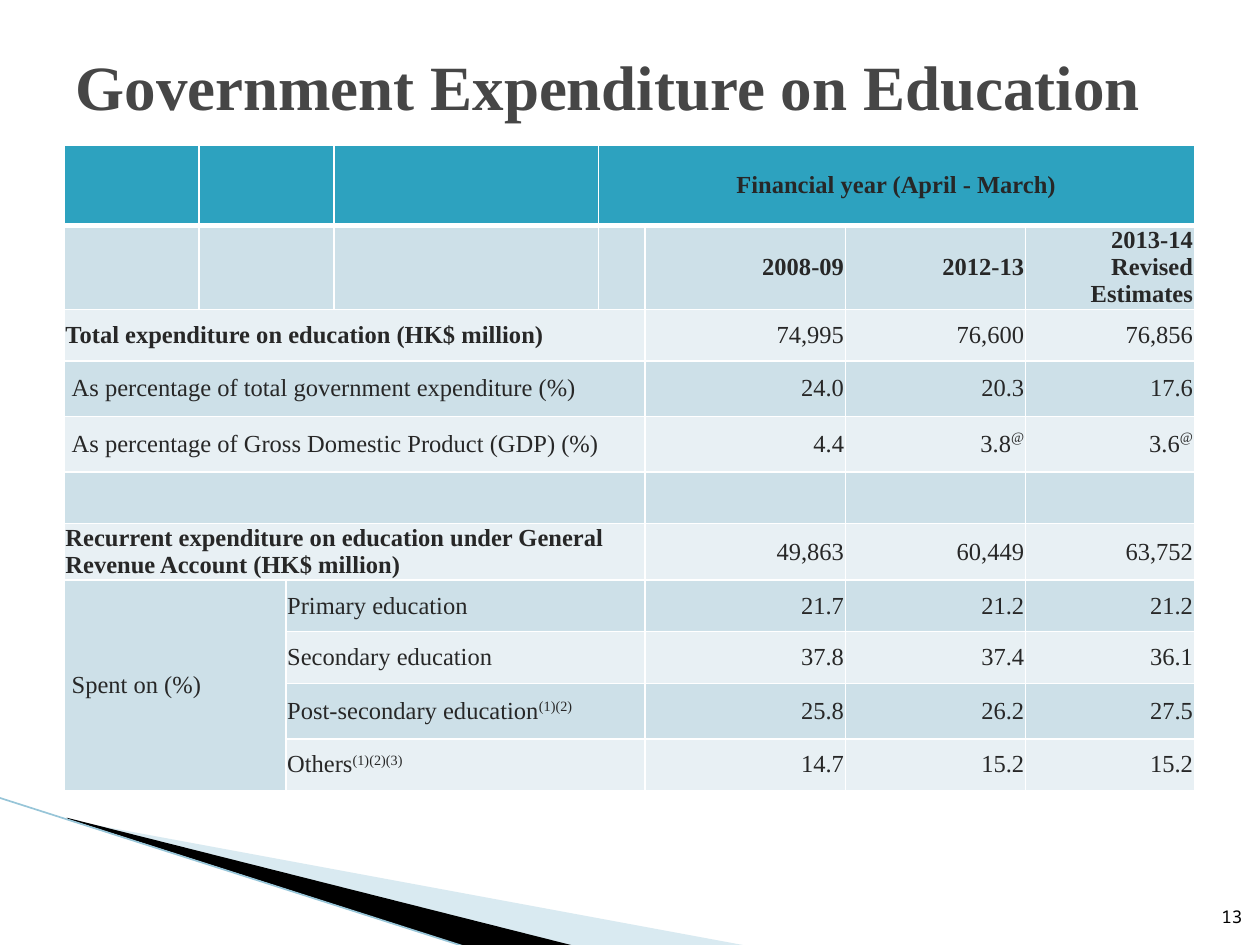
from lxml.etree import SubElement
from pptx import Presentation
from pptx.dml.color import RGBColor
from pptx.enum.shapes import MSO_CONNECTOR
from pptx.enum.text import MSO_ANCHOR as Anchor, MSO_AUTO_SIZE, PP_ALIGN as Align
from pptx.oxml.ns import qn
from pptx.util import Inches, Pt

THEME = dict(
    font="Times New Roman", number_font="Noto Sans Mono",
    title_size=36, body_size=14, number_size=10,
    title="464646", body="272727", black="000000", border="FFFFFF",
    header="2DA2BF", bands=("CDE0E8", "E8F0F4"), wedge="A0CBDC", edge="97C5D8",
)
TITLE = "Government Expenditure on Education"
PAGE_NUMBER = "13"

COLUMNS = [1.07, 0.69, 0.38, 2.1, 0.37, 1.59, 1.43, 1.34]
ROWS = [0.64, 0.65, 0.41, 0.44, 0.44, 0.41, 0.44, 0.41, 0.41, 0.44, 0.41]
FIRST_VALUE = 5
YEARS = ["2008-09", "2012-13", "2013-14\nRevised Estimates"]
# Text after "^" is raised. Each entry: label, values, bold label
TOTALS = [
    ("Total expenditure on education (HK$ million)", ["74,995", "76,600", "76,856"], True),
    ("\u00a0As percentage of total government expenditure (%)", ["24.0", "20.3", "17.6"], False),
    ("\u00a0As percentage of Gross Domestic Product (GDP) (%)", ["4.4", "3.8^@", "3.6^@"], False),
    ("", ["", "", ""], False),
    ("Recurrent expenditure on education under General Revenue Account (HK$ million)",
     ["49,863", "60,449", "63,752"], True),
]
SPENT_ON = "\u00a0Spent on (%)\u00a0"
LEVELS = [
    ("Primary education", ["21.7", "21.2", "21.2"]),
    ("Secondary education", ["37.8", "37.4", "36.1"]),
    ("Post-secondary\u00a0education^(1)(2)", ["25.8", "26.2", "27.5"]),
    ("Others^(1)(2)(3)", ["14.7", "15.2", "15.2"]),
]
WEDGES = [
    ([(0.55, 6.51), (5.95, 7.51), (4.56, 7.51), (0.55, 6.5)], THEME["wedge"], 40),
    ([(0.53, 6.49), (4.57, 7.51), (3.72, 7.52), (0.54, 6.5)], THEME["black"], 100),
]


def color(value):
    return RGBColor.from_string(value)


def write(frame, text, size=THEME["body_size"], font=THEME["font"], ink=THEME["body"],
          bold=False, align=Align.LEFT, raise_by=40):
    for index, line in enumerate(text.split("\n")):
        para = frame.add_paragraph() if index else frame.paragraphs[0]
        para.alignment = align
        para.font.size = Pt(size)
        for level, part in enumerate(line.split("^")):
            if not part:
                continue
            span = para.add_run()
            span.text = part
            span.font.name, span.font.size, span.font.bold = font, Pt(size), bold
            span.font.color.rgb = color(ink)
            if level:
                span._r.get_or_add_rPr().set("baseline", str(raise_by * 1000))


def add_borders(cell, **widths):
    properties = cell._tc.get_or_add_tcPr()
    for side in "LRTB":
        line = SubElement(properties, qn(f"a:ln{side}"), w=str(Pt(widths.get(side, 1))))
        fill = SubElement(line, qn("a:solidFill"))
        SubElement(fill, qn("a:srgbClr"), val=THEME["border"])


def add_wedge(page, points, fill, opacity):
    corners = [(Inches(x), Inches(y)) for x, y in points]
    builder = page.shapes.build_freeform(*corners[0])
    builder.add_line_segments(corners[1:], close=True)
    wedge = builder.convert_to_shape()
    wedge.shadow.inherit = False
    wedge.line.fill.background()
    wedge.fill.solid()
    wedge.fill.fore_color.rgb = color(fill)
    if opacity < 100:
        tint = wedge._element.spPr.find(".//" + qn("a:srgbClr"))
        SubElement(tint, qn("a:alpha"), val=str(opacity * 1000))


def add_edge(page):
    edge = page.shapes.add_connector(MSO_CONNECTOR.STRAIGHT, Inches(-0.01), Inches(6.33),
                                     Inches(3.71), Inches(7.52))
    edge.line.color.rgb = color(THEME["edge"])
    edge.line.width = Pt(0.95)
    SubElement(edge._element.spPr, qn("a:effectLst"))


def style_cells(table):
    for r in range(len(ROWS)):
        for c in range(len(COLUMNS)):
            cell = table.cell(r, c)
            add_borders(cell, **({"B": 3} if r == 0 else {"T": 3} if r == 1 else {}))
            cell.fill.solid()
            cell.fill.fore_color.rgb = color(THEME["bands"][(r - 1) % 2] if r else THEME["header"])
            cell.vertical_anchor = Anchor.MIDDLE
            cell.margin_left = cell.margin_right = Inches(0.01)
            cell.margin_top = cell.margin_bottom = Inches(0.01)


def add_expenditure_table(page):
    table = page.shapes.add_table(len(ROWS), len(COLUMNS), Inches(0.51), Inches(1.15),
                                  Inches(sum(COLUMNS)), Inches(sum(ROWS))).table
    table.first_row = table.horz_banding = False
    for column, width in zip(table.columns, COLUMNS):
        column.width = Inches(width)
    for row, height in zip(table.rows, ROWS):
        row.height = Inches(height)
    style_cells(table)

    def put(r, c, text, to=None, **style):
        """Write a cell, first merging it up to the (row, column) in to."""
        cell = table.cell(r, c)
        if to:
            cell.merge(table.cell(*to))
        write(cell.text_frame, text, **style)

    def put_values(r, values, **style):
        for c, value in enumerate(values, FIRST_VALUE):
            put(r, c, value, align=Align.RIGHT, **style)

    for r in (0, 1):
        put(r, 1, "", to=(r, 2))
    put(0, 4, "Financial year (April - March)", to=(0, 7), bold=True, align=Align.CENTER)
    put_values(1, YEARS, bold=True)
    for r, (label, values, bold) in enumerate(TOTALS, 2):
        put(r, 0, label, to=(r, FIRST_VALUE - 1), bold=bold)
        put_values(r, values)
    first_level = 2 + len(TOTALS)
    put(first_level, 0, SPENT_ON, to=(len(ROWS) - 1, 1))
    for r, (label, values) in enumerate(LEVELS, first_level):
        put(r, 2, label, to=(r, FIRST_VALUE - 1), raise_by=30)
        put_values(r, values)


def add_title(page):
    title = page.shapes.title
    title.left, title.top, title.width, title.height = map(Inches, (0.5, 0.05, 9, 1.25))
    frame = title.text_frame
    frame.auto_size, frame.vertical_anchor = MSO_AUTO_SIZE.NONE, Anchor.MIDDLE
    write(frame, TITLE, size=THEME["title_size"], ink=THEME["title"], bold=True)
    page.shapes._spTree.append(title._element)  # in front of the table


def add_page_number(page):
    box = page.shapes.add_textbox(Inches(9.46), Inches(7.01), Inches(0.4), Inches(0.4))
    frame = box.text_frame
    frame.word_wrap, frame.vertical_anchor = True, Anchor.BOTTOM
    frame.margin_left = frame.margin_right = 0
    write(frame, PAGE_NUMBER, size=THEME["number_size"], font=THEME["number_font"],
          ink=THEME["black"], align=Align.RIGHT)


def main():
    deck = Presentation()
    deck.slide_width, deck.slide_height = Inches(10), Inches(7.5)
    page = deck.slides.add_slide(deck.slide_layouts[5])
    for points, fill, opacity in WEDGES:
        add_wedge(page, points, fill, opacity)
    add_edge(page)
    add_expenditure_table(page)
    add_title(page)
    add_page_number(page)
    deck.save("out.pptx")


if __name__ == "__main__":
    main()
